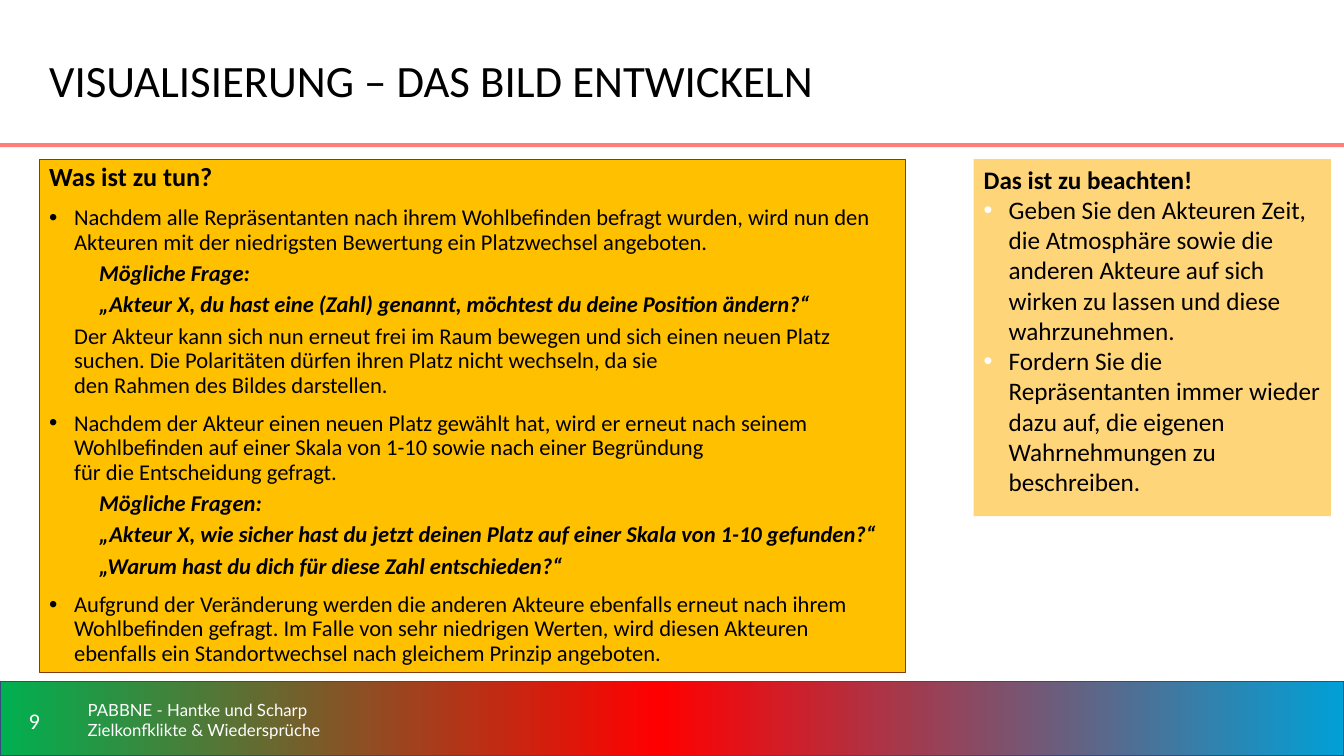
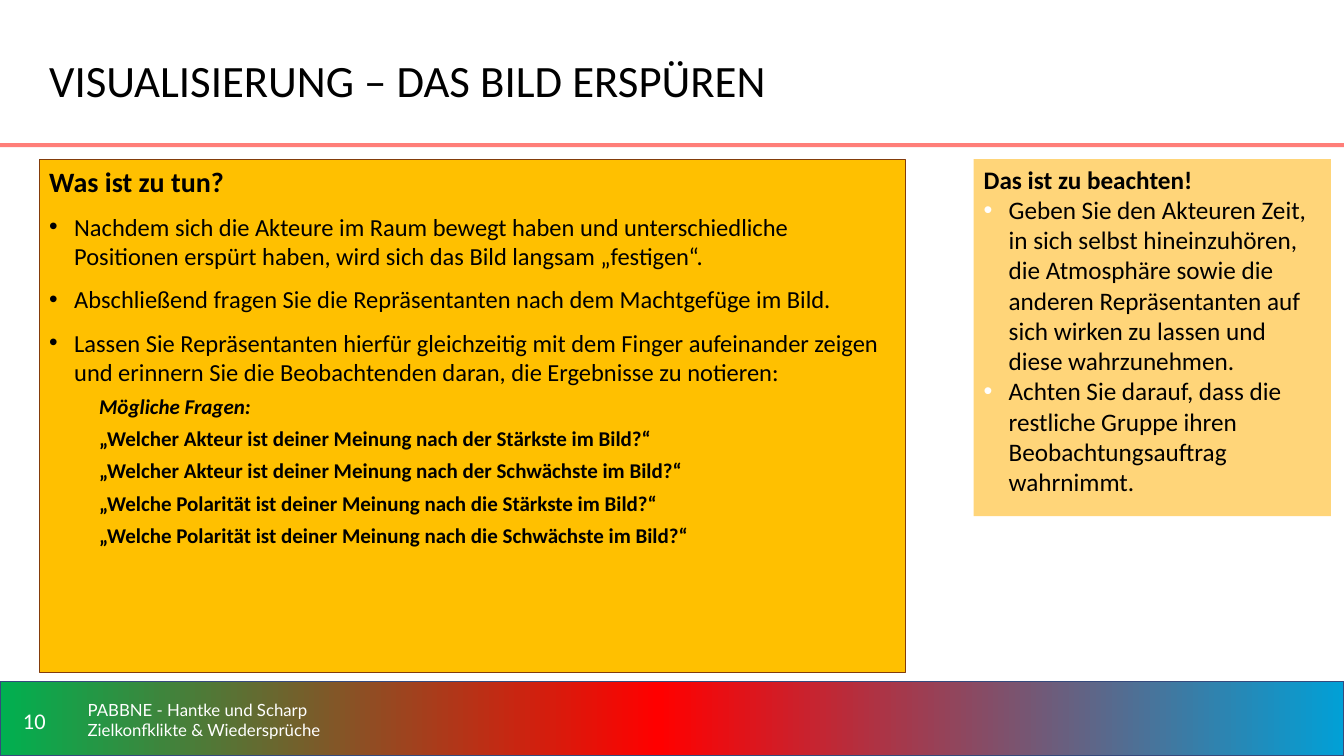
from dataclasses import dataclass

from lxml import etree
from pptx import Presentation
from pptx.dml.color import RGBColor
from pptx.enum.shapes import MSO_SHAPE
from pptx.enum.text import MSO_ANCHOR, PP_ALIGN
from pptx.oxml.ns import qn
from pptx.util import Cm, Pt

RECTANGLE = MSO_SHAPE.RECTANGLE
TOP, MIDDLE = MSO_ANCHOR.TOP, MSO_ANCHOR.MIDDLE
LEFT, CENTER = PP_ALIGN.LEFT, PP_ALIGN.CENTER


@dataclass(frozen=True)
class Theme:
    text: str = "000000"
    light: str = "FFFFFF"
    rule: str = "FF7E79"
    task_fill: str = "FFC000"
    task_line: str = "833C0B"
    note_fill: str = "FFD579"
    band_line: str = "364A7D"
    band_stops: tuple = ((0, "00B050"), (49, "FF0000"), (100, "01A0D6"))
    font: str = "Calibri"
    footer_font: str = "Lato"
    title_size: float = 32
    number_size: float = 16
    footer_size: float = 12
    note_size: float = 18


@dataclass(frozen=True)
class TextScale:
    """Type sizes and spacing of one panel."""
    heading: float
    body: float
    question: float
    line_spacing: float = 1.0
    bullet_gap: float = 10
    bullet_color: str = "000000"
    bullet_percent: int = 100


@dataclass(frozen=True)
class ParagraphKind:
    margin: float = 0
    bullet: bool = False
    bold: bool = False
    italic: bool = False
    gap: float = 5


THEME = Theme()
INDENT = 0.63
HEADING = ParagraphKind(bold=True, gap=0)
BULLET = ParagraphKind(INDENT, bullet=True)
CONTINUED = ParagraphKind(INDENT)
QUESTION = ParagraphKind(2 * INDENT, bold=True, italic=True)
UPRIGHT_QUESTION = ParagraphKind(2 * INDENT, bold=True)

SLIDE_WIDTH, SLIDE_HEIGHT = 33.87, 19.05
# Boxes are left, top, width, height in centimetres.
TITLE_BOX = (0.99, 0.51, 25, 3)
RULE_BOX = (0, 3.61, SLIDE_WIDTH, 0.1)
TASK_BOX = (0.99, 4.01, 21.82, 12.93)
NOTE_BOX = (24.54, 4.01, 9, 9)
BAND_BOX = (0, 17.17, SLIDE_WIDTH, 1.88)

NOTE_SCALE = TextScale(THEME.note_size, THEME.note_size, THEME.note_size,
                       bullet_gap=0, bullet_color=THEME.light)
FOOTER = "PABBNE - Hantke und Scharp Zielkonfklikte & Wiedersprüche"
TASK_HEADING = "Was ist zu tun?"
NOTE_HEADING = "Das ist zu beachten!"

SLIDES = [
    {
        "number": 9,
        "title": "VISUALISIERUNG – DAS BILD ENTWICKELN",
        "scale": TextScale(18.7, 16.1, 16.1, line_spacing=0.9, bullet_percent=105),
        "tasks": [
            (BULLET, "Nachdem alle Repräsentanten nach ihrem Wohlbefinden befragt wurden, "
                     "wird nun den Akteuren mit der niedrigsten Bewertung ein Platzwechsel "
                     "angeboten."),
            (QUESTION, "Mögliche Frage:"),
            (QUESTION, "„Akteur X, du hast eine (Zahl) genannt, möchtest du deine Position "
                       "ändern?“"),
            (CONTINUED, "Der Akteur kann sich nun erneut frei im Raum bewegen und sich einen "
                        "neuen Platz suchen. Die Polaritäten dürfen ihren Platz nicht "
                        "wechseln, da sie\nden Rahmen des Bildes darstellen."),
            (BULLET, "Nachdem der Akteur einen neuen Platz gewählt hat, wird er erneut nach "
                     "seinem Wohlbefinden auf einer Skala von 1-10 sowie nach einer "
                     "Begründung\nfür die Entscheidung gefragt."),
            (QUESTION, "Mögliche Fragen:"),
            (QUESTION, "„Akteur X, wie sicher hast du jetzt deinen Platz auf einer Skala von "
                       "1-10 gefunden?“"),
            (QUESTION, "„Warum hast du dich für diese Zahl entschieden?“"),
            (BULLET, "Aufgrund der Veränderung werden die anderen Akteure ebenfalls erneut "
                     "nach ihrem Wohlbefinden gefragt. Im Falle von sehr niedrigen Werten, "
                     "wird diesen Akteuren ebenfalls ein Standortwechsel nach gleichem "
                     "Prinzip angeboten."),
        ],
        "notes": [
            "Geben Sie den Akteuren Zeit, die Atmosphäre sowie die anderen Akteure auf sich "
            "wirken zu lassen und diese wahrzunehmen.",
            "Fordern Sie die Repräsentanten immer wieder dazu auf, die eigenen "
            "Wahrnehmungen zu beschreiben.",
        ],
    },
    {
        "number": 10,
        "title": "VISUALISIERUNG – DAS BILD ERSPÜREN",
        "scale": TextScale(20, 17.5, 15),
        "tasks": [
            (BULLET, "Nachdem sich die Akteure im Raum bewegt haben und unterschiedliche "
                     "Positionen erspürt haben, wird sich das Bild langsam „festigen“."),
            (BULLET, "Abschließend fragen Sie die Repräsentanten nach dem Machtgefüge im "
                     "Bild."),
            (BULLET, "Lassen Sie Repräsentanten hierfür gleichzeitig mit dem Finger "
                     "aufeinander zeigen und erinnern Sie die Beobachtenden daran, die "
                     "Ergebnisse zu notieren:"),
            (QUESTION, "Mögliche Fragen:"),
            (UPRIGHT_QUESTION, "„Welcher Akteur ist deiner Meinung nach der Stärkste im Bild?“"),
            (UPRIGHT_QUESTION, "„Welcher Akteur ist deiner Meinung nach der Schwächste im Bild?“"),
            (UPRIGHT_QUESTION, "„Welche Polarität ist deiner Meinung nach die Stärkste im Bild?“"),
            (UPRIGHT_QUESTION, "„Welche Polarität ist deiner Meinung nach die Schwächste im Bild?“"),
        ],
        "notes": [
            "Geben Sie den Akteuren Zeit, in sich selbst hineinzuhören, die Atmosphäre sowie "
            "die anderen Repräsentanten auf sich wirken zu lassen und diese wahrzunehmen.",
            "Achten Sie darauf, dass die restliche Gruppe ihren Beobachtungsauftrag "
            "wahrnimmt.",
        ],
    },
]


def rgb(color):
    return RGBColor.from_string(color)


def lengths(box):
    return [Cm(value) for value in box]


def format_runs(paragraph, size, color, font=THEME.font, bold=False, italic=False):
    for run in paragraph.runs:
        run.font.name = font
        run.font.size = Pt(size)
        run.font.color.rgb = rgb(color)
        run.font.bold = bold
        run.font.italic = italic


def add_rectangle(slide, box, fill=None, line=None, line_width=0.75):
    rectangle = slide.shapes.add_shape(RECTANGLE, *lengths(box))
    rectangle.shadow.inherit = False
    if fill:
        rectangle.fill.solid()
        rectangle.fill.fore_color.rgb = rgb(fill)
    if line:
        rectangle.line.color.rgb = rgb(line)
        rectangle.line.width = Pt(line_width)
    else:
        rectangle.line.fill.background()
    return rectangle


def add_label(slide, box, text, size, color, font=THEME.font, align=LEFT):
    label = slide.shapes.add_textbox(*lengths(box)).text_frame
    label.word_wrap = True
    label.vertical_anchor = MIDDLE
    label.text = text
    label.paragraphs[0].alignment = align
    format_runs(label.paragraphs[0], size, color, font)


def set_gradient(shape, stops):
    """Fill the shape from left to right with (percent, colour) stops."""
    shape.fill.gradient()
    shape.fill.gradient_angle = 0
    stop_list = shape.element.spPr.find(".//" + qn("a:gsLst"))
    for old_stop in list(stop_list):
        stop_list.remove(old_stop)
    for percent, color in stops:
        stop = etree.SubElement(stop_list, qn("a:gs"), pos=str(percent * 1000))
        etree.SubElement(stop, qn("a:srgbClr"), val=color)


def set_indent(paragraph, kind, scale):
    properties = paragraph._p.get_or_add_pPr()
    properties.set("marL", str(Cm(kind.margin)))
    properties.set("indent", str(-Cm(INDENT) if kind.bullet else 0))
    if kind.bullet:
        color = etree.SubElement(properties, qn("a:buClr"))
        etree.SubElement(color, qn("a:srgbClr"), val=scale.bullet_color)
        etree.SubElement(properties, qn("a:buSzPct"), val=str(scale.bullet_percent * 1000))
        etree.SubElement(properties, qn("a:buFont"), typeface="Arial")
        etree.SubElement(properties, qn("a:buChar"), char="•")
    else:
        etree.SubElement(properties, qn("a:buNone"))


def add_panel(slide, box, heading, entries, scale, fill, line=None):
    """Place a filled panel with a heading and (kind, text) entries."""
    frame = add_rectangle(slide, box, fill, line).text_frame
    frame.word_wrap = True
    frame.vertical_anchor = TOP
    for index, (kind, text) in enumerate([(HEADING, heading), *entries]):
        paragraph = frame.add_paragraph() if index else frame.paragraphs[0]
        paragraph.text = text
        set_indent(paragraph, kind, scale)
        paragraph.alignment = LEFT
        paragraph.line_spacing = scale.line_spacing
        paragraph.space_before = Pt(scale.bullet_gap if kind.bullet else kind.gap)
        if kind is HEADING:
            size = scale.heading
        elif kind in (QUESTION, UPRIGHT_QUESTION):
            size = scale.question
        else:
            size = scale.body
        format_runs(paragraph, size, THEME.text, bold=kind.bold, italic=kind.italic)


def add_header(slide, title):
    add_rectangle(slide, RULE_BOX, THEME.rule)
    add_label(slide, TITLE_BOX, title, THEME.title_size, THEME.text)


def add_footer(slide, box, number):
    left, top, _, _ = box
    band = add_rectangle(slide, box, line=THEME.band_line, line_width=1)
    set_gradient(band, THEME.band_stops)
    label_top, label_height = top + 0.2, 1.55
    add_label(slide, (left, label_top, 1.73, label_height), str(number),
              THEME.number_size, THEME.light, align=CENTER)
    add_label(slide, (left + 1.96, label_top, 7.06, label_height), FOOTER,
              THEME.footer_size, THEME.light, THEME.footer_font)


def add_step_slide(presentation, content):
    slide = presentation.slides.add_slide(presentation.slide_layouts[6])
    add_footer(slide, BAND_BOX, content["number"])
    add_header(slide, content["title"])
    add_panel(slide, TASK_BOX, TASK_HEADING, content["tasks"], content["scale"],
              THEME.task_fill, THEME.task_line)
    notes = [(BULLET, note) for note in content["notes"]]
    add_panel(slide, NOTE_BOX, NOTE_HEADING, notes, NOTE_SCALE, THEME.note_fill)


def main():
    presentation = Presentation()
    presentation.slide_width = Cm(SLIDE_WIDTH)
    presentation.slide_height = Cm(SLIDE_HEIGHT)
    for content in SLIDES:
        add_step_slide(presentation, content)
    presentation.save("out.pptx")


if __name__ == "__main__":
    main()
